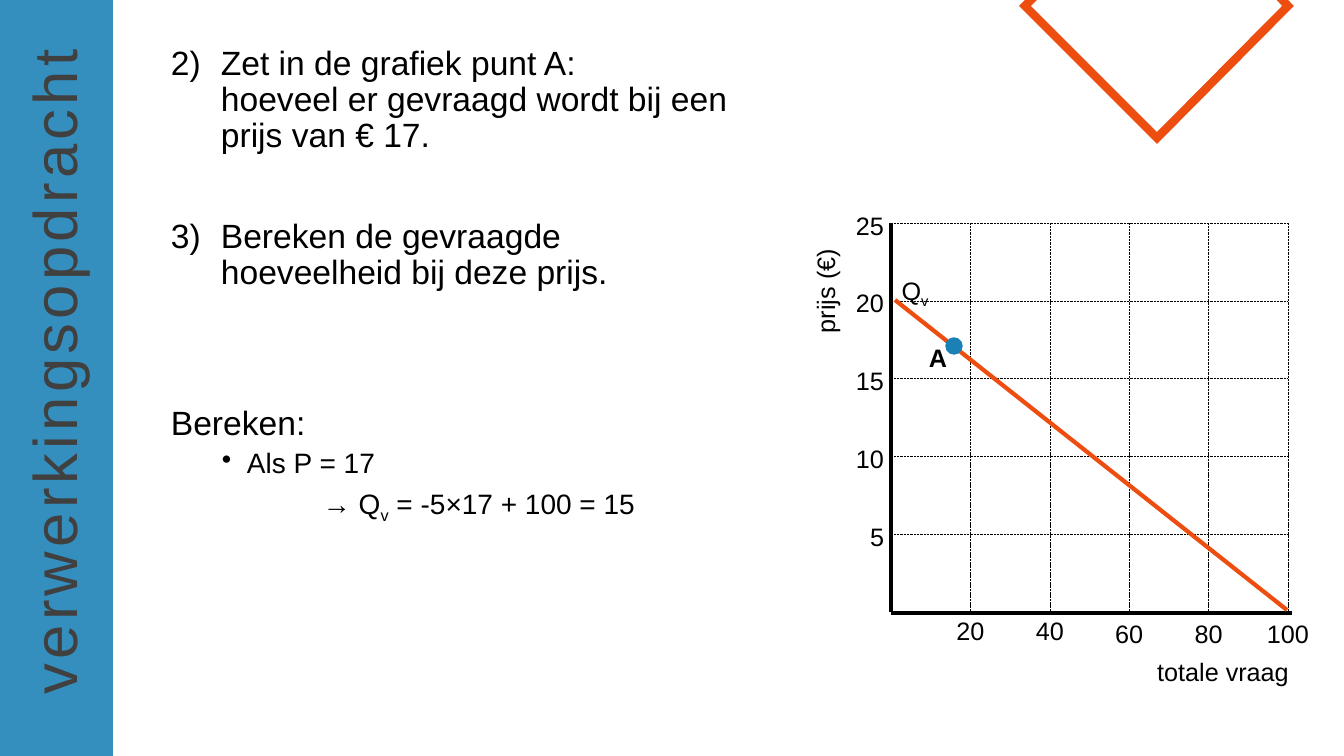
from lxml.etree import SubElement
from pptx import Presentation
from pptx.dml.color import RGBColor
from pptx.enum.dml import MSO_LINE
from pptx.enum.shapes import MSO_CONNECTOR, MSO_SHAPE
from pptx.enum.text import MSO_ANCHOR, MSO_AUTO_SIZE, PP_ALIGN
from pptx.oxml.ns import qn
from pptx.util import Pt

PX = 914400 / 100.8
BLUE = RGBColor(0x1A, 0x80, 0xB6)
ORANGE = RGBColor(0xED, 0x4D, 0x0F)
GREY = RGBColor(0x40, 0x40, 0x40)
BLACK = RGBColor(0, 0, 0)

TITLE = "verwerkingsopdracht"
NUMBERED_2 = ("buAutoNum", {"type": "arabicParenR", "startAt": "2"})
NUMBERED_3 = ("buAutoNum", {"type": "arabicParenR", "startAt": "3"})
DOT = ("buChar", {"char": "•"})
PLAIN = ("buNone", {})
# Each line: text, subscripts, size, space before, margin, indent, bullet
BODY = [
    (["Zet in de grafiek punt A:\vhoeveel er gevraagd wordt bij een prijs van € 17."],
     24, 10, 50, -50, NUMBERED_2),
    (["Bereken de gevraagde hoeveelheid bij deze prijs."], 24, 46, 50, -50, NUMBERED_3),
    (["Bereken:"], 24, 82, 0, 0, PLAIN),
    (["Als P = 17"], 20, 5, 76, -25, DOT),
    (["→ Q", "v", " = -5×17 + 100 = 15"], 20, 5, 152, 0, PLAIN),
]
PRICES = ["25", "20", "15", "10", "5"]
QUANTITIES = [("20", 630), ("40", 630), ("60", 633), ("80", 633), ("100", 633)]
GRID_LEFT, GRID_TOP, GRID_RIGHT, GRID_BOTTOM = 891, 223, 1288, 612
AXIS_Y = 613
DIAMOND = [(1038, -7), (1025, 6), (1157, 138), (1288, 6), (1276, -7)]


def emu(*lengths):
    return [round(length * PX) for length in lengths]


def write_spans(para, parts, size, bold=False):
    for index, part in enumerate(parts):
        para.add_run().text = part
        span = para.runs[-1]
        span.font.name, span.font.size = "Arial", Pt(size)
        span.font.bold, span.font.color.rgb = bold, BLACK
        if index == 1:
            span._r.get_or_add_rPr().set("baseline", "-25000")


def add_label(page, parts, center_x, center_y, width, bold=False, rotation=0):
    box = page.shapes.add_textbox(*emu(center_x - width / 2, center_y - 20, width, 40))
    box.rotation = rotation
    box.text_frame.word_wrap = False
    para = box.text_frame.paragraphs[0]
    para.alignment = PP_ALIGN.CENTER
    write_spans(para, parts, 18, bold)


def add_line(page, start, end, color=BLACK, width=3.0, dash=None):
    line = page.shapes.add_connector(MSO_CONNECTOR.STRAIGHT, *emu(*start, *end))
    line.line.color.rgb, line.line.width = color, Pt(width)
    if dash:
        line.line.dash_style = dash
    SubElement(line._element.spPr, qn("a:effectLst"))


def add_sidebar(page):
    bar = page.shapes.add_shape(MSO_SHAPE.RECTANGLE, *emu(0, 0, 113, 756))
    bar.shadow.inherit = False
    bar.fill.solid()
    bar.fill.fore_color.rgb = BLUE
    color = bar._element.spPr.find(qn("a:solidFill"))[0]
    SubElement(color, qn("a:alpha"), val="88000")
    bar.line.fill.background()
    page.shapes._spTree.insert(2, bar._element)
    title = page.shapes.title
    title.left, title.top, title.width, title.height = emu(-285, 330, 675, 84)
    title.rotation = 270
    frame = title.text_frame
    frame.text = TITLE
    frame.word_wrap, frame.auto_size = False, MSO_AUTO_SIZE.NONE
    frame.vertical_anchor = MSO_ANCHOR.MIDDLE
    para = frame.paragraphs[0]
    para.alignment = PP_ALIGN.CENTER
    span = para.runs[0]
    span.font.name, span.font.size, span.font.color.rgb = "Arial", Pt(44), GREY
    span._r.get_or_add_rPr().set("spc", "300")


def add_diamond(page):
    points = [tuple(emu(*point)) for point in DIAMOND]
    builder = page.shapes.build_freeform(*points[0])
    builder.add_line_segments(points[1:], close=False)
    diamond = builder.convert_to_shape()
    diamond.shadow.inherit = False
    diamond.fill.background()
    diamond.line.color.rgb, diamond.line.width = ORANGE, Pt(6)
    SubElement(diamond._element.spPr.find(qn("a:ln")), qn("a:miter"), lim="800000")


def add_body(page):
    box = page.shapes.add_textbox(*emu(161, 41, 588, 685))
    frame = box.text_frame
    frame.word_wrap = True
    for index, (parts, size, before, margin, indent, bullet) in enumerate(BODY):
        para = frame.add_paragraph() if index else frame.paragraphs[0]
        if len(parts) == 1:
            para.text = parts[0]
            for span in para.runs:
                span.font.name, span.font.size = "Arial", Pt(size)
                span.font.color.rgb = BLACK
        else:
            write_spans(para, parts, size)
        para.line_spacing, para.space_before = 0.9, Pt(before)
        properties = para._p.get_or_add_pPr()
        left, hang = emu(margin, indent)
        properties.set("marL", str(left))
        properties.set("indent", str(hang))
        SubElement(properties, qn("a:" + bullet[0]), **bullet[1])


def add_graph(page):
    column = (GRID_RIGHT - GRID_LEFT) / len(QUANTITIES)
    row = (GRID_BOTTOM - GRID_TOP) / len(PRICES)
    add_line(page, (GRID_LEFT, GRID_TOP), (GRID_LEFT, GRID_BOTTOM))
    for index, price in enumerate(PRICES):
        y = GRID_TOP + index * row
        add_line(page, (GRID_LEFT, y), (GRID_RIGHT, y), BLACK, 0.25, MSO_LINE.SQUARE_DOT)
        width = 20 + 14 * len(price)
        add_label(page, [price], 894 - width / 2, y + 2, width)
    for index, (quantity, label_y) in enumerate(QUANTITIES, 1):
        x = GRID_LEFT + index * column
        add_line(page, (x, GRID_TOP), (x, GRID_BOTTOM), BLACK, 0.25, MSO_LINE.SQUARE_DOT)
        add_label(page, [quantity], x, label_y, 20 + 14 * len(quantity))
    add_label(page, ["totale vraag"], 1223, 671, 153)
    add_label(page, ["prijs (€)"], 825, 291, 105, rotation=270)
    add_line(page, (1292, AXIS_Y), (GRID_LEFT, AXIS_Y))
    add_line(page, (895, 300), (1287, 610), ORANGE)
    add_label(page, ["Q", "v"], 915, 290, 49)
    point = page.shapes.add_shape(MSO_SHAPE.OVAL, *emu(946, 338, 16, 16))
    point.shadow.inherit = False
    point.fill.solid()
    point.fill.fore_color.rgb = BLUE
    point.line.color.rgb, point.line.width = BLUE, Pt(1)
    add_label(page, ["A"], 938, 357, 38, bold=True)


def main():
    """Build the demand-curve exercise slide."""
    deck = Presentation()
    deck.slide_width, deck.slide_height = emu(1344, 756)
    page = deck.slides.add_slide(deck.slide_layouts[5])
    add_diamond(page)
    add_sidebar(page)
    add_body(page)
    add_graph(page)
    deck.save("out.pptx")


if __name__ == "__main__":
    main()
